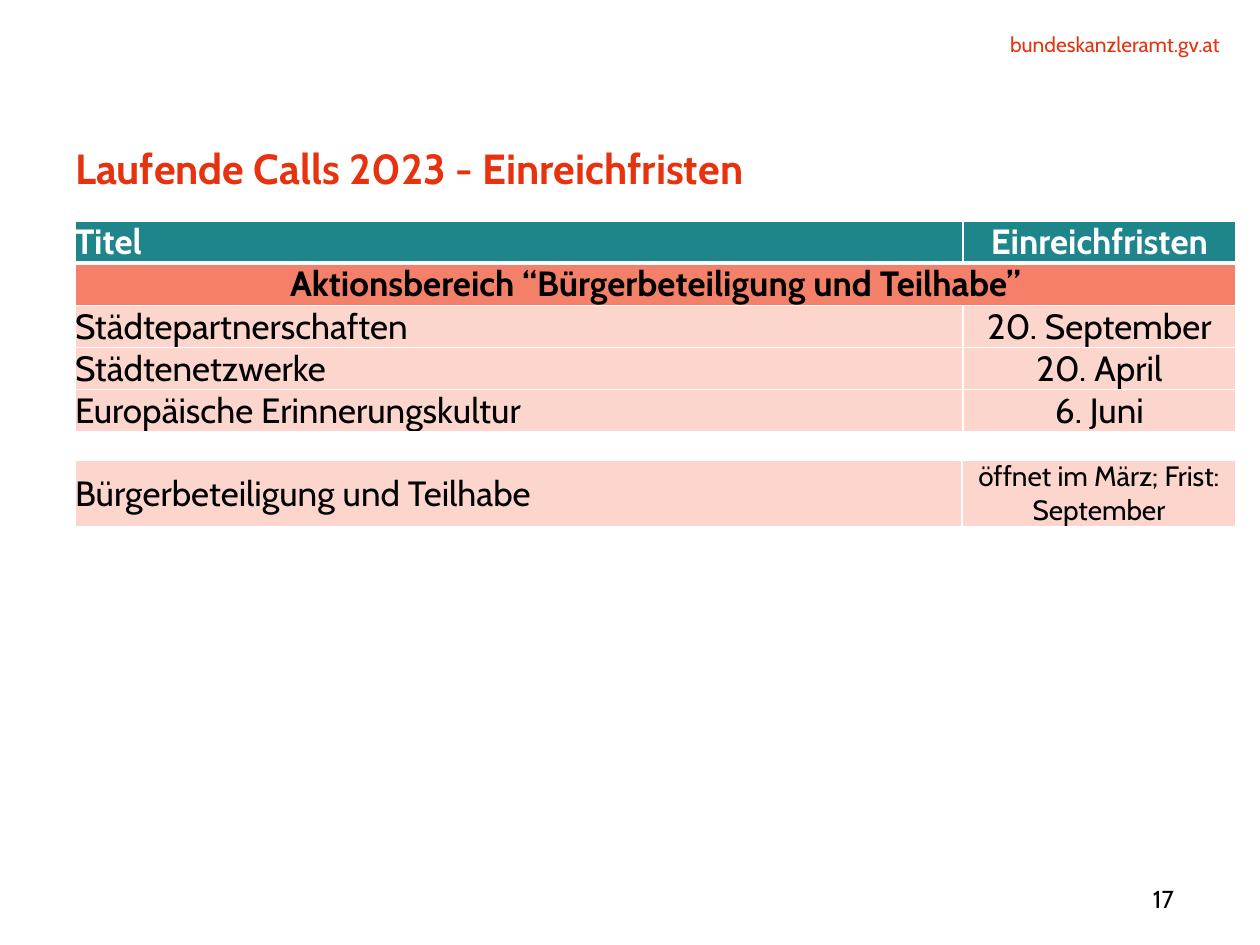
from lxml import etree
from pptx import Presentation
from pptx.dml.color import RGBColor
from pptx.enum.text import MSO_ANCHOR, PP_ALIGN
from pptx.oxml.ns import qn
from pptx.util import Pt

LEFT, CENTER, RIGHT = PP_ALIGN.LEFT, PP_ALIGN.CENTER, PP_ALIGN.RIGHT
TOP, MIDDLE, BOTTOM = MSO_ANCHOR.TOP, MSO_ANCHOR.MIDDLE, MSO_ANCHOR.BOTTOM
PX = 914400 / 126

THEME = {
    "font": "Cabin",
    "red": "E6320F", "teal": "1E858B", "coral": "F5806A", "rose": "FCD5CD",
    "black": "000000", "white": "FFFFFF",
    "title": 24, "table": 20, "note": 16, "number": 14, "address": 12,
}


def write(frame, text, size, color, align, bold=False):
    para = frame.paragraphs[0]
    para.alignment = align
    span = para.add_run()
    span.text = text
    values = {"name": THEME["font"], "size": Pt(THEME[size]), "bold": bold}
    for name, value in values.items():
        setattr(span.font, name, value)
    span.font.color.rgb = RGBColor.from_string(THEME[color])
    return para


def add_grid(page, place, widths, rows):
    table = page.shapes.add_table(len(rows), len(widths), *[round(n * PX) for n in place]).table
    table.first_row = table.horz_banding = False
    for column, width in zip(table.columns, widths):
        column.width = round(width * PX)
    for row_index, (fill, color, bold, rule_above, rule_below, entries) in enumerate(rows):
        for column_index in range(len(widths)):
            cell = table.cell(row_index, column_index)
            cell.margin_left = cell.margin_right = cell.margin_top = cell.margin_bottom = 0
            # Cell borders come before the fill
            borders = {"a:lnL": 1, "a:lnR": 1, "a:lnT": rule_above, "a:lnB": rule_below}
            for tag, points in borders.items():
                line = etree.SubElement(cell._tc.get_or_add_tcPr(), qn(tag), w=str(Pt(points)))
                solid = etree.SubElement(line, qn("a:solidFill"))
                etree.SubElement(solid, qn("a:srgbClr"), val=THEME["white"])
            cell.fill.solid()
            cell.fill.fore_color.rgb = RGBColor.from_string(THEME[fill])
            if column_index < len(entries):
                text, size, align, anchor = entries[column_index]
                cell.vertical_anchor = anchor
                write(cell.text_frame, text, size, color, align, bold)
        if len(entries) == 1:
            table.cell(row_index, 0).merge(table.cell(row_index, len(widths) - 1))


deck = Presentation()
deck.slide_width, deck.slide_height = round(1260 * PX), round(945 * PX)
page = deck.slides.add_slide(deck.slide_layouts[6])

# Address, page number and title
labels = [
    ((916, 32, 304, 25), "bundeskanzleramt.gv.at", "address", "red", RIGHT, TOP, False),
    ((1062, 880, 112, 37), "17", "number", "black", RIGHT, MIDDLE, False),
    ((75, 140, 1100, 115), "Laufende Calls 2023 - Einreichfristen", "title", "red", LEFT, TOP, True),
]
for place, text, size, color, align, anchor, bold in labels:
    frame = page.shapes.add_textbox(*[round(n * PX) for n in place]).text_frame
    settings = {"word_wrap": True, "vertical_anchor": anchor, "margin_left": 0,
                "margin_right": 0, "margin_top": 0, "margin_bottom": 0}
    for name, value in settings.items():
        setattr(frame, name, value)
    para = write(frame, text, size, color, align, bold)
    if size == "title":
        para.line_spacing = Pt(30)

# Table of calls and deadlines
calls = [
    ("Städtepartnerschaften", "20. September"),
    ("Städtenetzwerke", "20. April"),
    ("Europäische Erinnerungskultur", "6. Juni"),
]
rows = [
    ("teal", "white", True, 1, 3, [("Titel", "table", LEFT, MIDDLE),
                                   ("Einreichfristen", "table", CENTER, MIDDLE)]),
    ("coral", "black", True, 3, 1, [("Aktionsbereich “Bürgerbeteiligung und Teilhabe”",
                                     "table", CENTER, MIDDLE)]),
]
for call, deadline in calls:
    rows.append(("rose", "black", False, 1, 1, [(call, "table", LEFT, MIDDLE),
                                                (deadline, "table", CENTER, BOTTOM)]))
add_grid(page, (75, 221, 1161, 211), (888, 273), rows)

# Call that opens later
later = [("Bürgerbeteiligung und Teilhabe", "table", LEFT, MIDDLE),
         ("öffnet im März; Frist: September", "note", CENTER, MIDDLE)]
add_grid(page, (75, 460, 1161, 67), (887, 274), [("rose", "black", False, 1, 1, later)])

deck.save("out.pptx")
